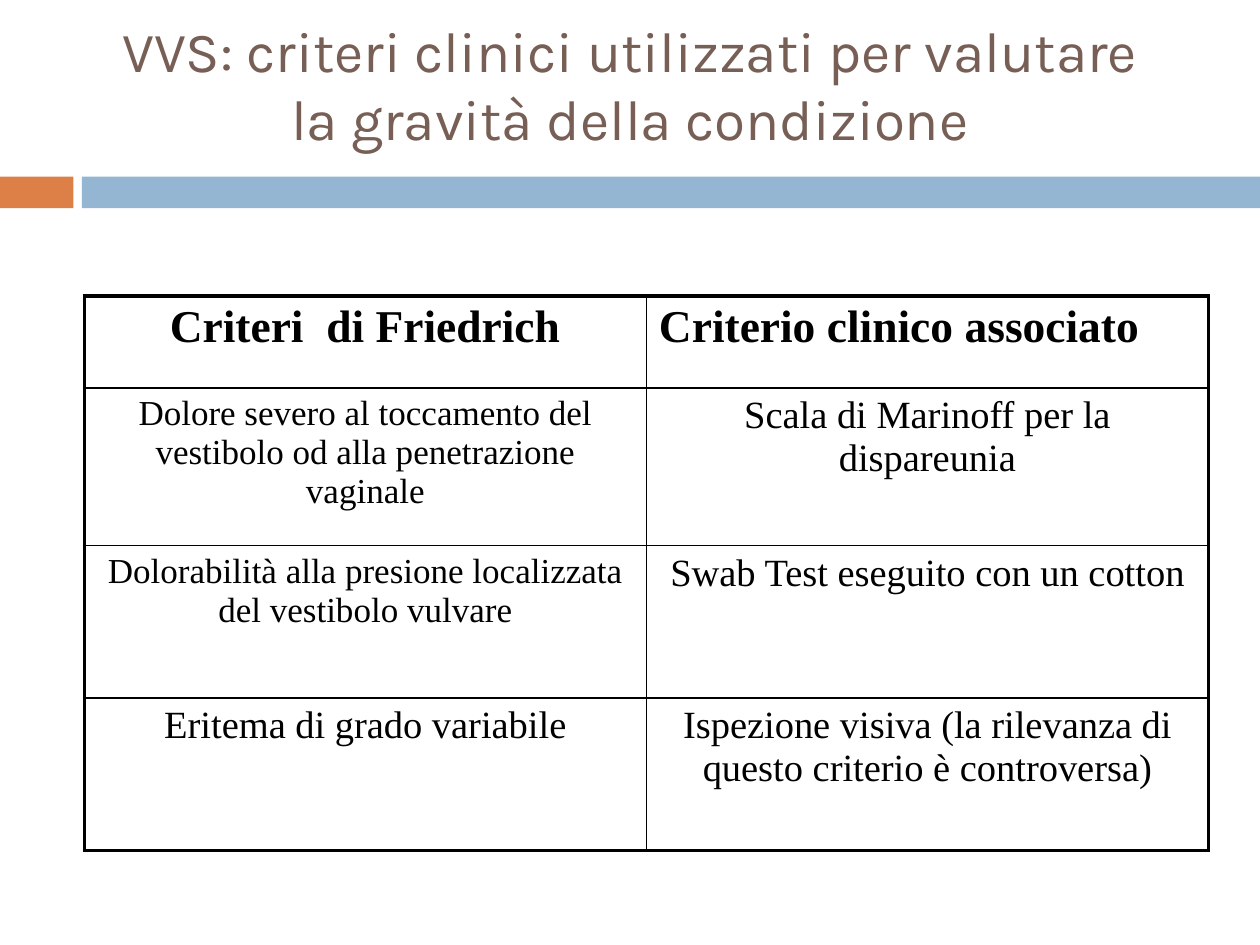
"""Build the slide on clinical criteria for the severity of VVS."""
from lxml.etree import SubElement as Sub
from pptx import Presentation as Deck
from pptx.dml.color import RGBColor as Rgb
from pptx.enum.shapes import MSO_SHAPE as Kind
from pptx.enum.text import MSO_ANCHOR as Anchor, PP_ALIGN as Align
from pptx.oxml.ns import qn
from pptx.util import Cm, Pt

ROWS = [
    [("Criteri  di Friedrich", 26), ("Criterio clinico associato", 26)],
    [("Dolore severo al toccamento del vestibolo od alla penetrazione vaginale", 20),
     ("Scala di Marinoff per la dispareunia", 22)],
    [("Dolorabilità alla presione localizzata del vestibolo vulvare", 20),
     ("Swab Test eseguito con un cotton", 22)],
    [("Eritema di grado variabile", 22),
     ("Ispezione visiva (la rilevanza di questo criterio è controversa)", 22)],
]
TALL = [1.85, 3.18, 3.07, 3.07]
WIDE = [11.33, 11.33]


def hue(code):
    return Rgb.from_string(code)


class Page:
    """Hold the style and the current slide."""

    ink = "000000"
    thin, thick = 1, 2.25

    def __init__(self, deck):
        self.slide = deck.slides.add_slide(deck.slide_layouts[6])

    def label(self, frame, text, align, color, **font):
        para = frame.paragraphs[0]
        para.alignment = align
        run = para.add_run()
        run.text = text
        for key, value in font.items():
            setattr(run.font, key, value)
        run.font.color.rgb = hue(color)

    def bar(self, left, width, color):
        box = (Cm(n) for n in (left, 3.56, width, 0.64))
        shape = self.slide.shapes.add_shape(Kind.RECTANGLE, *box)
        shape.shadow.inherit = False
        shape.fill.solid()
        shape.fill.fore_color.rgb = hue(color)
        shape.line.fill.background()

    def title(self, text):
        box = (Cm(n) for n in (1.9, 0.43, 21.6, 2.54))
        frame = self.slide.shapes.add_textbox(*box).text_frame
        frame.word_wrap = True
        frame.vertical_anchor = Anchor.MIDDLE
        self.label(frame, text, Align.CENTER, "775F55", name="Karla", size=Pt(32.4))

    def edge(self, cell, sides):
        props = cell._tc.get_or_add_tcPr()
        for side, outer in sides.items():
            width = Pt(self.thick if outer else self.thin)
            line = Sub(props, qn(f"a:ln{side}"), w=str(width))
            Sub(Sub(line, qn("a:solidFill")), qn("a:srgbClr"), val=self.ink)

    def table(self, rows, left, top):
        size = Cm(sum(WIDE)), Cm(sum(TALL))
        grid = self.slide.shapes.add_table(
            len(rows), len(WIDE), Cm(left), Cm(top), *size).table
        grid.first_row = grid.horz_banding = False
        for col, width in zip(grid.columns, WIDE):
            col.width = Cm(width)
        for r, row in enumerate(rows):
            grid.rows[r].height = Cm(TALL[r])
            for c, (text, points) in enumerate(row):
                cell = grid.cell(r, c)
                self.edge(cell, {"L": c == 0, "R": c == len(row) - 1,
                                 "T": r == 0, "B": r == len(rows) - 1})
                cell.fill.background()
                align = Align.LEFT if (r, c) == (0, 1) else Align.CENTER
                self.label(cell.text_frame, text, align, self.ink,
                           name="Times New Roman", size=Pt(points), bold=r == 0)


def main():
    deck = Deck()
    deck.slide_width, deck.slide_height = Cm(25.4), Cm(19.05)
    page = Page(deck)
    page.bar(0, 1.48, "DD8047")
    page.bar(1.65, 23.75, "94B6D2")
    page.title("VVS: criteri clinici utilizzati per valutare la gravità della condizione")
    page.table(ROWS, 1.7, 5.97)
    deck.save("out.pptx")


if __name__ == "__main__":
    main()
